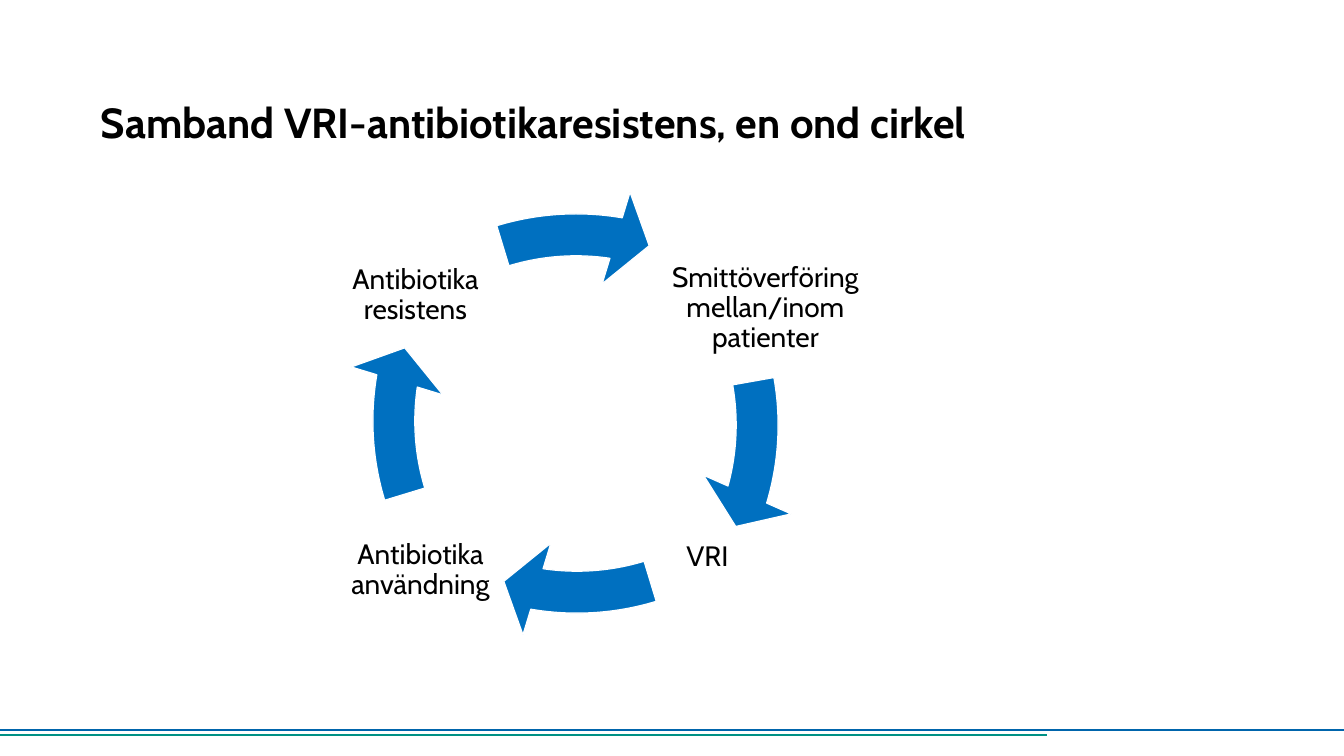
from dataclasses import dataclass

from lxml.etree import SubElement
from pptx import Presentation
from pptx.dml.color import RGBColor
from pptx.enum.shapes import MSO_CONNECTOR, MSO_SHAPE
from pptx.enum.text import MSO_ANCHOR, PP_ALIGN
from pptx.oxml.ns import qn
from pptx.util import Pt


@dataclass(frozen=True)
class Theme:
    font: str = "Cabin"
    ink: str = "000000"
    paper: str = "FFFFFF"
    arrow: str = "0070C0"
    blue: str = "0065AC"
    teal: str = "009185"
    title: int = 30
    label: int = 20
    edge: float = 0.85
    rule: int = 2


def px(n):
    return round(n * 914400 / 100.8)


def write(frame, text, font, color, size, bold=False, align=PP_ALIGN.LEFT,
          anchor=MSO_ANCHOR.MIDDLE, inset=0, spacing=1.0):
    frame.word_wrap = True
    frame.vertical_anchor = anchor
    frame.margin_left = frame.margin_right = px(inset)
    frame.margin_top = frame.margin_bottom = px(inset)
    para = frame.paragraphs[0]
    para.alignment = align
    para.line_spacing = spacing
    run = para.add_run()
    run.text = text
    run.font.name = font
    run.font.size = Pt(size)
    run.font.bold = bold
    run.font.color.rgb = RGBColor.from_string(color)


class Canvas:
    def __init__(self, slide, theme):
        self.shapes = slide.shapes
        self.theme = theme

    def text(self, text, box, **style):
        item = self.shapes.add_textbox(*map(px, box))
        write(item.text_frame, text, self.theme.font, self.theme.ink, **style)

    def title(self, text, box):
        self.text(text, box, size=self.theme.title, bold=True,
                  anchor=MSO_ANCHOR.BOTTOM, spacing=Pt(34))

    def label(self, text, box):
        self.text(text, box, size=self.theme.label,
                  align=PP_ALIGN.CENTER, inset=3, spacing=0.9)

    def rule(self, y, end, color):
        line = self.shapes.add_connector(
            MSO_CONNECTOR.STRAIGHT, 0, px(y), px(end), px(y))
        line.line.color.rgb = RGBColor.from_string(color)
        line.line.width = Pt(self.theme.rule)
        SubElement(line._element.spPr, qn("a:effectLst"))

    def arrow(self, left, top, size, turn):
        item = self.shapes.add_shape(
            MSO_SHAPE.CIRCULAR_ARROW, *map(px, (left, top, size, size)))
        for i, value in enumerate((0.07, 4.65, 113.51, 97.84, 0.08)):
            item.adjustments[i] = value
        item.rotation = turn
        item.shadow.inherit = False
        item.fill.solid()
        item.fill.fore_color.rgb = RGBColor.from_string(self.theme.arrow)
        item.line.color.rgb = RGBColor.from_string(self.theme.paper)
        item.line.width = Pt(self.theme.edge)


def main():
    deck = Presentation()
    deck.slide_width, deck.slide_height = px(1344), px(756)
    theme = Theme()
    canvas = Canvas(deck.slides.add_slide(deck.slide_layouts[6]), theme)

    canvas.rule(730, 1344, theme.blue)
    canvas.rule(735, 1047, theme.teal)

    labels = (
        ("Antibiotika användning", (344, 494, 153, 153)),
        ("Antibiotika resistens", (339, 250, 153, 91)),
        ("Smittöverföring mellan/inom patienter", (656, 232, 219, 153)),
        ("VRI", (631, 481, 153, 153)),
    )
    for text, box in labels:
        canvas.label(text, box)

    arrows = ((346, 122, 0), (277, 187, 90), (207, 126, 186.9), (278, 42, 270))
    for left, top, turn in arrows:
        canvas.arrow(left, top, 598, turn)

    canvas.title("Samband VRI-antibiotikaresistens, en ond cirkel",
                 (101, 44, 1143, 103))
    deck.save("out.pptx")


if __name__ == "__main__":
    main()
